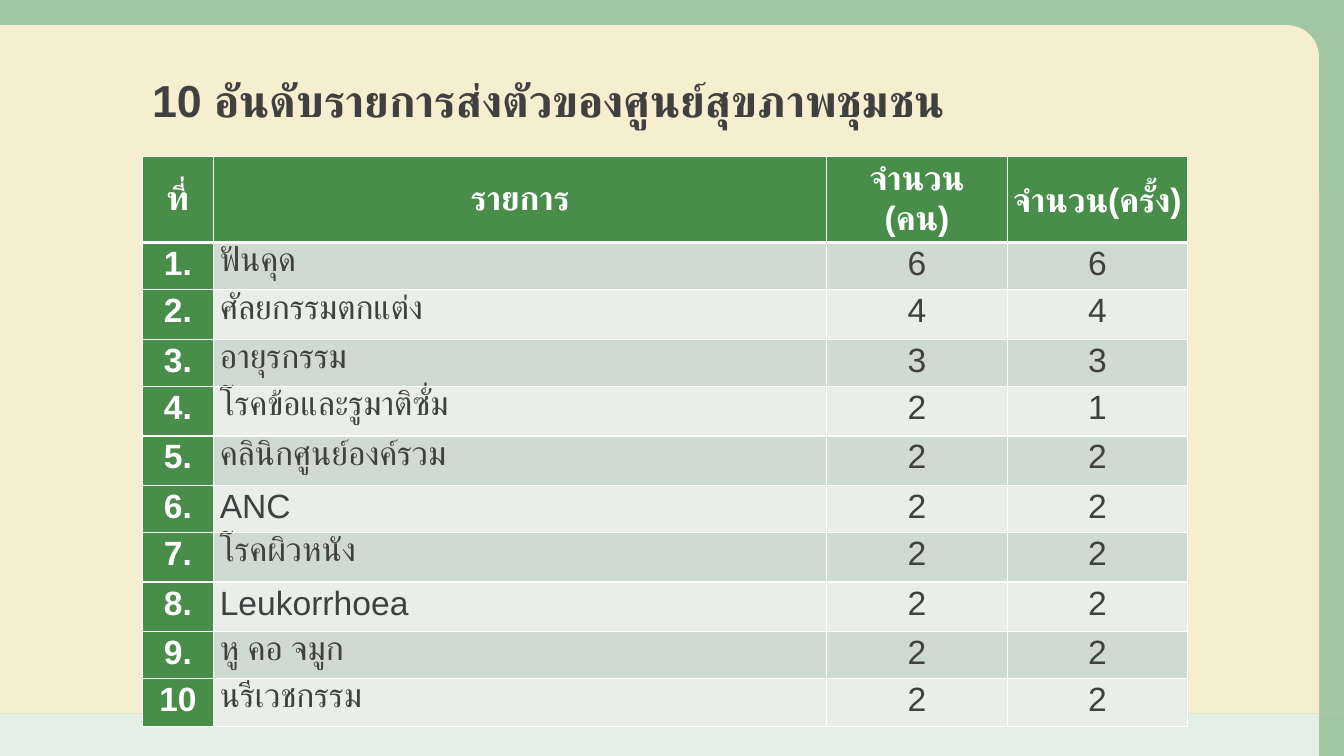
from lxml import etree
from pptx import Presentation
from pptx import util as u
from pptx.dml import color
from pptx.enum import shapes, text
from pptx.oxml import ns

COLORS = {
    "green": "488E4A",
    "mint": "D8EBD8",
    "cream": "F5EECF",
    "ink": "404040",
    "white": "FFFFFF",
    "odd": "CFDBD0",
    "even": "E9EEE9",
}
WIDTH, HEIGHT = 53.33, 30
PANEL_RIGHT, PANEL_BOTTOM = 52.33, 28.32
CORNER = 1.26
LEFT = 5.64
TABLE_COLUMNS = (2.84, 24.32, 7.16, 7.16)
SHORT, TALL = 1.88, 1.96
TABLE_ROWS = (TALL, SHORT, TALL, SHORT, TALL, TALL, SHORT, TALL, TALL, SHORT, SHORT)

HEADINGS = ("ที่", "รายการ", "จำนวน (คน)", "จำนวน(ครั้ง)")
REFERRALS = (
    ("1.", "ฟันคุด", "6", "6"),
    ("2.", "ศัลยกรรมตกแต่ง", "4", "4"),
    ("3.", "อายุรกรรม", "3", "3"),
    ("4.", "โรคข้อและรูมาติซั่ม", "2", "1"),
    ("5.", "คลินิกศูนย์องค์รวม", "2", "2"),
    ("6.", "ANC", "2", "2"),
    ("7.", "โรคผิวหนัง", "2", "2"),
    ("8.", "Leukorrhoea", "2", "2"),
    ("9.", "หู คอ จมูก", "2", "2"),
    ("10", "นรีเวชกรรม", "2", "2"),
)


class SlideBuilder:
    font = "Arial"
    unit = u.Inches(0.25)

    def __init__(self, slide):
        self.slide = slide

    def grid(self, *lengths):
        return [u.Emu(round(length * self.unit)) for length in lengths]

    def rgb(self, name):
        return color.RGBColor.from_string(COLORS[name])

    def panel(self, box, fill, opacity=100, corner=None):
        kind = shapes.MSO_SHAPE.ROUND_1_RECTANGLE if corner else shapes.MSO_SHAPE.RECTANGLE
        panel = self.slide.shapes.add_shape(kind, *self.grid(*box))
        panel.shadow.inherit = False
        panel.line.fill.background()
        panel.fill.solid()
        panel.fill.fore_color.rgb = self.rgb(fill)
        if corner:
            panel.adjustments[0] = corner / min(box[2:])
        if opacity < 100:
            tint = panel._element.spPr.find(".//" + ns.qn("a:srgbClr"))
            etree.SubElement(tint, ns.qn("a:alpha"), val=str(opacity * 1000))

    def words(self, frame, wording, size, ink, bold, spacing, after=0, centred=False):
        paragraph = frame.paragraphs[0]
        paragraph.alignment = text.PP_ALIGN.CENTER if centred else text.PP_ALIGN.LEFT
        paragraph.line_spacing = spacing
        paragraph.space_after = u.Pt(after)
        run = paragraph.add_run()
        run.text = wording
        run.font.name = self.font
        run.font.size = u.Pt(size)
        run.font.bold = bold
        run.font.color.rgb = self.rgb(ink)

    def title(self, box, wording):
        frame = self.slide.shapes.add_textbox(*self.grid(*box)).text_frame
        frame.word_wrap = True
        frame.vertical_anchor = text.MSO_ANCHOR.BOTTOM
        self.words(frame, wording, 32, "ink", True, 0.9)

    def border(self, cell, side, width):
        line = etree.SubElement(
            cell._tc.get_or_add_tcPr(), ns.qn("a:ln" + side), w=str(u.Pt(width))
        )
        fill = etree.SubElement(line, ns.qn("a:solidFill"))
        etree.SubElement(fill, ns.qn("a:srgbClr"), val=COLORS["white"])

    def cell(self, cell, wording, row, column):
        strong = row == 0 or column == 0
        for side in "LRTB":
            under_heading = (row, side) in ((0, "B"), (1, "T"))
            self.border(cell, side, 3 if under_heading else 1)
        cell.fill.solid()
        band = "odd" if row % 2 else "even"
        cell.fill.fore_color.rgb = self.rgb("green" if strong else band)
        cell.margin_left = cell.margin_right = u.Inches(0.06)
        cell.margin_top = cell.margin_bottom = 0
        cell.vertical_anchor = text.MSO_ANCHOR.TOP if row else text.MSO_ANCHOR.MIDDLE
        self.words(
            cell.text_frame, wording, 24, "white" if strong else "ink", strong,
            1.07, after=8, centred=row == 0 or column != 1,
        )

    def table(self, left, top, columns, rows, records):
        box = self.grid(left, top, sum(columns), sum(rows))
        table = self.slide.shapes.add_table(len(rows), len(columns), *box).table
        for column, width in zip(table.columns, self.grid(*columns)):
            column.width = width
        for row, height in zip(table.rows, self.grid(*rows)):
            row.height = height
        for r, record in enumerate(records):
            for c, wording in enumerate(record):
                self.cell(table.cell(r, c), wording, r, c)


def main():
    deck = Presentation()
    deck.slide_width, deck.slide_height = u.Inches(13.33), u.Inches(7.5)
    page = SlideBuilder(deck.slides.add_slide(deck.slide_layouts[6]))
    side, footer = WIDTH - PANEL_RIGHT, HEIGHT - PANEL_BOTTOM
    page.panel((0, PANEL_BOTTOM, PANEL_RIGHT, footer), "mint", 70)
    page.panel((PANEL_RIGHT, PANEL_BOTTOM, side, footer), "green", 50)
    page.panel((0, 0, WIDTH, PANEL_BOTTOM), "green", 50)
    page.panel((0, 1, PANEL_RIGHT, PANEL_BOTTOM - 1), "cream", corner=CORNER)
    page.title((LEFT, 2.48, 42, 2.76), "10 อันดับรายการส่งตัวของศูนย์สุขภาพชุมชน")
    page.table(LEFT, 6.2, TABLE_COLUMNS, TABLE_ROWS, (HEADINGS, *REFERRALS))
    deck.save("out.pptx")


if __name__ == "__main__":
    main()
